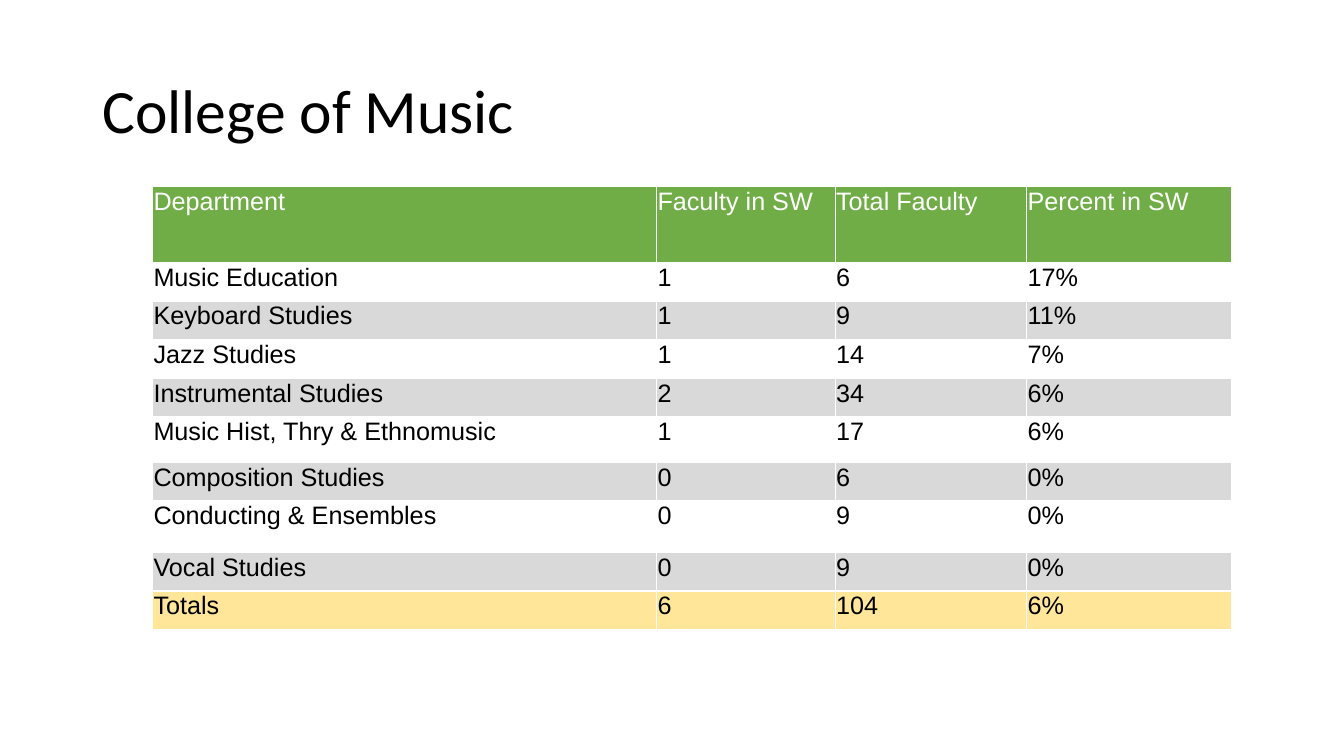
from dataclasses import dataclass

from lxml.etree import SubElement as Sub
from pptx import Presentation
from pptx.dml.color import RGBColor as Rgb
from pptx.enum.text import MSO_ANCHOR as Anchor, PP_ALIGN as Align
from pptx.oxml.ns import qn
from pptx.slide import Slide
from pptx.table import _Cell as Cell
from pptx.text.text import TextFrame as Frame
from pptx.util import Pt


@dataclass(frozen=True)
class Theme:
    black: str = "000000"
    white: str = "FFFFFF"
    green: str = "70AD47"
    gray: str = "D9D9D9"
    gold: str = "FFE699"
    head: str = "Calibri"
    body: str = "Arial"
    large: float = 44
    small: float = 18
    rule: float = 1


@dataclass(frozen=True)
class Row:
    cells: tuple[str, ...]
    fill: str | None = None
    color: str = Theme.black
    height: float = 27.6


THEME = Theme()
WIDTHS = (360, 127.6, 136.8, 146.2)

# Departments, with the taller rows marked
DEPTS = (
    Row(("Music Education", "1", "6", "17%")),
    Row(("Keyboard Studies", "1", "9", "11%"), THEME.gray),
    Row(("Jazz Studies", "1", "14", "7%")),
    Row(("Instrumental Studies", "2", "34", "6%"), THEME.gray),
    Row(("Music Hist, Thry & Ethnomusic", "1", "17", "6%"), height=32.6),
    Row(("Composition Studies", "0", "6", "0%"), THEME.gray),
    Row(("Conducting & Ensembles", "0", "9", "0%"), height=36.6),
    Row(("Vocal Studies", "0", "9", "0%"), THEME.gray),
)
ROWS = (
    Row(("Department", "Faculty in SW", "Total Faculty", "Percent in SW"),
        THEME.green, THEME.white, 54),
    *DEPTS,
    Row(("Totals", "6", "104", "6%"), THEME.gold),
)


def write(frame: Frame, text: str, *, font: str, size: float, color: str,
          space: float = 1.0) -> None:
    para = frame.paragraphs[0]
    para.alignment = Align.LEFT
    para.line_spacing = space
    run = para.add_run()
    run.text = text
    run.font.name = font
    run.font.size = Pt(size)
    run.font.bold = False
    run.font.color.rgb = Rgb.from_string(color)


def edge(cell: Cell) -> None:
    props = cell._tc.get_or_add_tcPr()
    for side in ("lnL", "lnR", "lnT", "lnB"):
        line = Sub(props, qn(f"a:{side}"), w=str(Pt(THEME.rule)))
        Sub(Sub(line, qn("a:solidFill")), qn("a:srgbClr"), val=THEME.white)


def style(cell: Cell, text: str, row: Row) -> None:
    cell.margin_left = cell.margin_right = cell.margin_top = Pt(0.7)
    cell.margin_bottom = Pt(0)
    cell.vertical_anchor = Anchor.TOP
    edge(cell)
    if row.fill:
        cell.fill.solid()
        cell.fill.fore_color.rgb = Rgb.from_string(row.fill)
    else:
        cell.fill.background()
    write(cell.text_frame, text, font=THEME.body, size=THEME.small,
          color=row.color)


def add_title(slide: Slide, text: str) -> None:
    title = slide.shapes.title
    title.left, title.top = Pt(66), Pt(28.75)
    title.width, title.height = Pt(828), Pt(104.4)
    title.text_frame.vertical_anchor = Anchor.MIDDLE
    write(title.text_frame, text, font=THEME.head, size=THEME.large,
          color=THEME.black, space=0.9)


def add_grid(slide: Slide, rows: tuple[Row, ...]) -> None:
    high = sum(row.height for row in rows)
    grid = slide.shapes.add_table(len(rows), len(WIDTHS), Pt(109), Pt(133.4),
                                  Pt(sum(WIDTHS)), Pt(high)).table
    grid.first_row = grid.horz_banding = False
    for col, width in zip(grid.columns, WIDTHS):
        col.width = Pt(width)
    for line, row in zip(grid.rows, rows):
        line.height = Pt(row.height)
        for cell, text in zip(line.cells, row.cells):
            style(cell, text, row)


def main() -> None:
    deck = Presentation()
    deck.slide_width, deck.slide_height = Pt(960), Pt(540)

    # Title Only layout
    slide = deck.slides.add_slide(deck.slide_layouts[5])
    add_title(slide, "College of Music")
    add_grid(slide, ROWS)
    deck.save("out.pptx")


if __name__ == "__main__":
    main()
